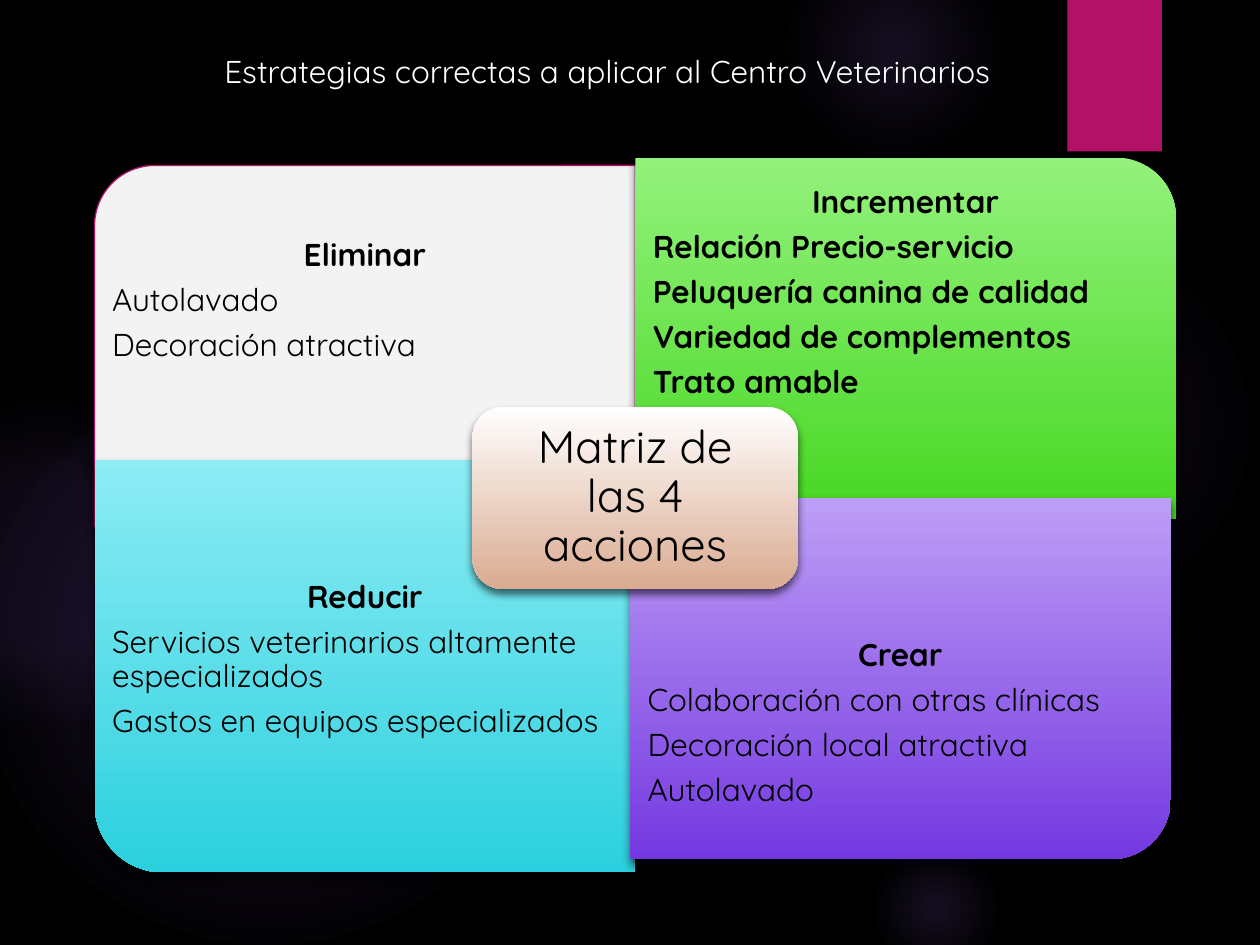
from lxml import etree
from pptx import Presentation
from pptx import util as u
from pptx.dml.color import RGBColor
from pptx.enum import shapes, text
from pptx.oxml import ns

FONT = "Quicksand"
GLOW = "9B6BF2"
QUADRANT_WIDTH = 309

GLOWS = [
    (496, 132, 222, [(0, 7), (36, 6), (69, 0)]),
    (448, -36, 126, [(0, 14), (36, 7), (73, 0)]),
    (496, 480, 78, [(0, 14), (36, 7), (66, 0)]),
    (-12, 210, 330, [(0, 11), (36, 10), (75, 0)]),
    (-66, 228, 186, [(0, 8), (36, 8), (72, 0)]),
]

QUADRANTS = [
    {"left": 54, "top": 94.5, "height": 206.5, "turn": 270, "colors": ["F3F3F3"],
     "border": "B31166", "heading": "Eliminar",
     "actions": ["Autolavado", "Decoración atractiva"]},
    {"left": 363, "top": 90, "height": 206.5, "turn": 0, "colors": ["93F17C", "47D722"],
     "heading": "Incrementar", "bold": True,
     "actions": ["Relación Precio-servicio", "Peluquería canina de calidad",
                 "Variedad de complementos", "Trato amable"]},
    {"left": 54, "top": 263, "height": 235.5, "turn": 180, "colors": ["8DECF4", "2BD0DE"],
     "heading": "Reducir", "anchor": text.MSO_ANCHOR.TOP,
     "actions": ["Servicios veterinarios altamente especializados",
                 "Gastos en equipos especializados"]},
    {"left": 360, "top": 284.5, "height": 206.5, "turn": 90, "colors": ["BD9EF6", "7438E0"],
     "heading": "Crear",
     "actions": ["Colaboración con otras clínicas", "Decoración local atractiva",
                 "Autolavado"]},
]


def color(hex_value):
    return RGBColor.from_string(hex_value)


def add_xml(parent, tag, **attributes):
    child = etree.SubElement(parent, ns.qn(tag))
    for name, value in attributes.items():
        child.set(name, str(value))
    return child


def add_color(parent, hex_value, alpha=100):
    shade = add_xml(parent, "a:srgbClr", val=hex_value)
    if alpha < 100:
        add_xml(shade, "a:alpha", val=alpha * 1000)


def fill_gradient(shape, stops, radial=False):
    gradient = etree.Element(ns.qn("a:gradFill"), rotWithShape="0")
    stop_list = add_xml(gradient, "a:gsLst")
    for position, hex_value, alpha in stops:
        add_color(add_xml(stop_list, "a:gs", pos=position * 1000), hex_value, alpha)
    if radial:
        center = add_xml(gradient, "a:path", path="circle")
        add_xml(center, "a:fillToRect", l=50000, t=50000, r=50000, b=50000)
    else:
        add_xml(gradient, "a:lin", ang=5400000, scaled=0)
    shape._element.spPr.find(ns.qn("a:prstGeom")).addnext(gradient)


def cast_shadow(shape, alpha, blur, distance):
    effects = shape._element.spPr.find(ns.qn("a:effectLst"))
    shadow = add_xml(effects, "a:outerShdw", blurRad=u.Pt(blur), dist=u.Pt(distance),
                     dir=5400000, algn="ctr", rotWithShape=0)
    add_color(shadow, "000000", alpha)


def add_panel(slide, kind, left, top, width, height, colors, border=None):
    panel = slide.shapes.add_shape(kind, u.Pt(left), u.Pt(top), u.Pt(width), u.Pt(height))
    panel.shadow.inherit = False
    if len(colors) == 1:
        panel.fill.solid()
        panel.fill.fore_color.rgb = color(colors[0])
    elif colors:
        fill_gradient(panel, [(0, colors[0], 100), (100, colors[1], 100)])
    if border:
        panel.line.color.rgb = color(border)
        panel.line.width = u.Pt(0.75)
    else:
        panel.line.fill.background()
    return panel


def format_paragraph(paragraph, size, hex_value, bold=False, align=text.PP_ALIGN.LEFT):
    paragraph.alignment = align
    paragraph.line_spacing = 0.9
    paragraph.space_before = u.Pt(0)
    paragraph.space_after = u.Pt(size * 0.35)
    for run in paragraph.runs:
        run.font.name = FONT
        run.font.size = u.Pt(size)
        run.font.bold = bold
        run.font.color.rgb = color(hex_value)


def set_frame(frame, inset, anchor):
    frame.auto_size = text.MSO_AUTO_SIZE.NONE
    frame.word_wrap = True
    frame.vertical_anchor = anchor
    frame.margin_left = frame.margin_right = u.Pt(inset)
    frame.margin_top = frame.margin_bottom = u.Pt(inset)


def place(slide, holder, left, top, width, height):
    holder.left, holder.top = u.Pt(left), u.Pt(top)
    holder.width, holder.height = u.Pt(width), u.Pt(height)
    slide.shapes._spTree.append(holder._element)


def add_quadrant(slide, holder, quadrant):
    left, top, height = quadrant["left"], quadrant["top"], quadrant["height"]
    width, turn = QUADRANT_WIDTH, quadrant["turn"]
    box = [left, top, width, height]
    if turn % 180:
        shift = (width - height) / 2
        box = [left + shift, top - shift, height, width]
    panel = add_panel(slide, shapes.MSO_SHAPE.ROUND_1_RECTANGLE, *box,
                      quadrant["colors"], quadrant.get("border"))
    panel.rotation = turn
    cast_shadow(panel, 60, 5, 3)

    list_height = height * 0.75
    list_top = top if turn in (0, 270) else top + height - list_height
    place(slide, holder, left, list_top, width, list_height)
    frame = holder.text_frame
    set_frame(frame, 10, quadrant.get("anchor", text.MSO_ANCHOR.MIDDLE))
    frame.text = "\n".join([quadrant["heading"]] + quadrant["actions"])
    for index, paragraph in enumerate(frame.paragraphs):
        heading = index == 0
        format_paragraph(paragraph, 18, "000000", heading or quadrant.get("bold", False),
                         text.PP_ALIGN.CENTER if heading else text.PP_ALIGN.LEFT)
        properties = paragraph._p.get_or_add_pPr()
        properties.set("marL", "0")
        properties.set("indent", "0")
        add_xml(properties, "a:buNone")


def add_center(slide):
    center = add_panel(slide, shapes.MSO_SHAPE.ROUNDED_RECTANGLE, 270, 232.5, 186, 104,
                       ["FFFFFF", "DAAB91"])
    cast_shadow(center, 60, 5, 3)
    set_frame(center.text_frame, 13, text.MSO_ANCHOR.MIDDLE)
    center.text_frame.text = "Matriz de las 4 acciones"
    format_paragraph(center.text_frame.paragraphs[0], 26, "000000",
                     align=text.PP_ALIGN.CENTER)


def add_backdrop(slide):
    slide.background.fill.solid()
    slide.background.fill.fore_color.rgb = color("000000")
    for left, top, size, stops in GLOWS:
        glow = add_panel(slide, shapes.MSO_SHAPE.OVAL, left, top, size, size, [])
        fill_gradient(glow, [(at, GLOW, alpha) for at, alpha in stops], radial=True)
    ribbon = add_panel(slide, shapes.MSO_SHAPE.RECTANGLE, 610, 0, 54, 86.5, ["B31166"])
    cast_shadow(ribbon, 45, 3, 2)


def add_title(slide):
    title = slide.shapes.title
    place(slide, title, 121, 26, 477, 29)
    set_frame(title.text_frame, 7.2, text.MSO_ANCHOR.MIDDLE)
    title.text_frame.margin_top = title.text_frame.margin_bottom = u.Pt(3.6)
    title.text_frame.text = "Estrategias correctas a aplicar al Centro Veterinarios"
    heading = title.text_frame.paragraphs[0]
    format_paragraph(heading, 18, "FFFFFF")
    heading.line_spacing = 1.0
    heading.space_after = u.Pt(0)


def main():
    deck = Presentation()
    deck.slide_width, deck.slide_height = u.Pt(720), u.Pt(540)
    slide = deck.slides.add_slide(deck.slide_layouts[4])
    lists = [holder for holder in slide.placeholders if holder.placeholder_format.idx > 0]
    add_backdrop(slide)
    for holder, quadrant in zip(lists, QUADRANTS):
        add_quadrant(slide, holder, quadrant)
    add_center(slide)
    add_title(slide)
    deck.save("out.pptx")


main()
